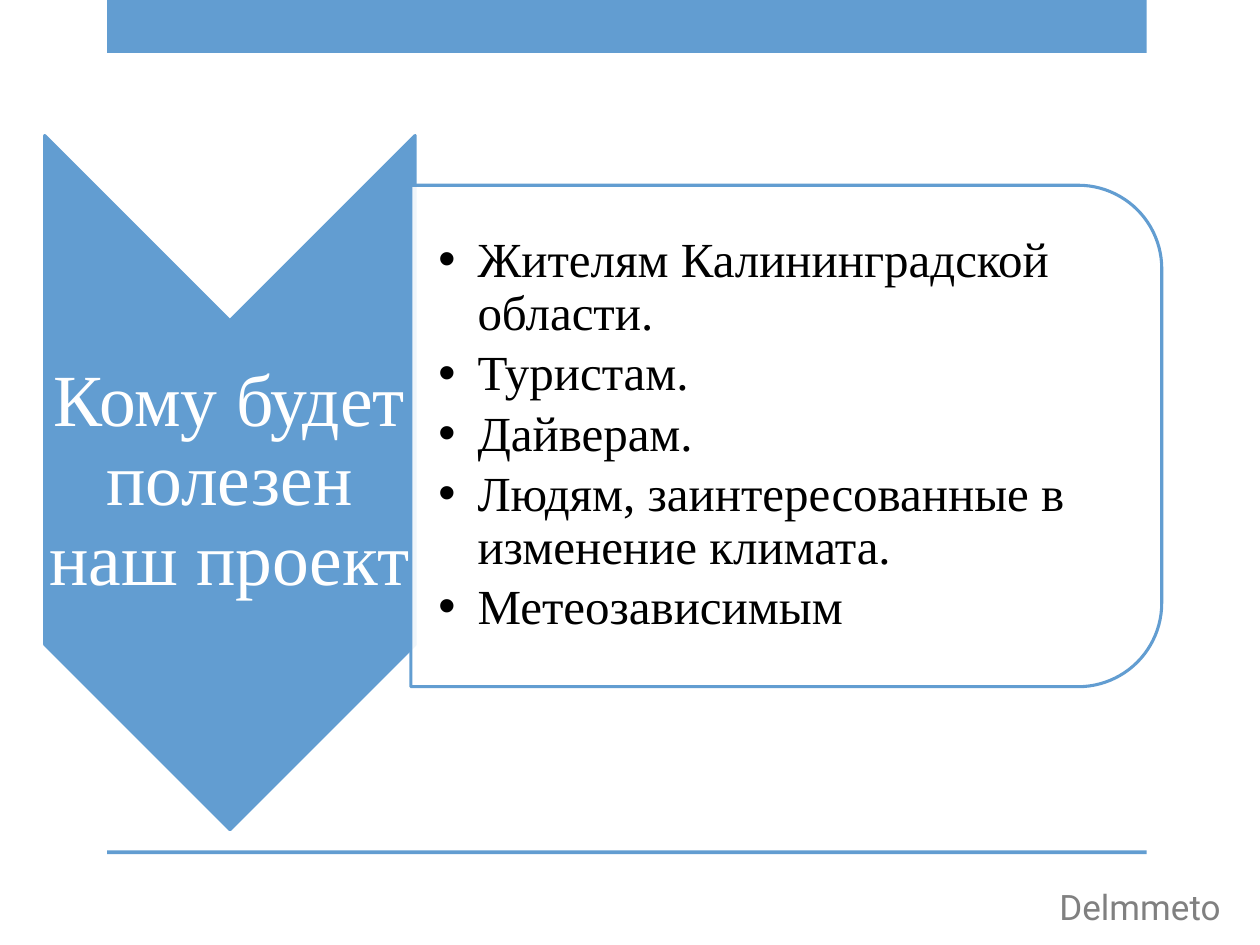
from lxml.etree import SubElement
from pptx import Presentation
from pptx.dml.color import RGBColor
from pptx.enum.shapes import MSO_SHAPE
from pptx.enum.text import MSO_ANCHOR, MSO_AUTO_SIZE, PP_ALIGN
from pptx.oxml.ns import qn
from pptx.util import Inches, Pt

TITLE = "Кому будет полезен наш проект"
GROUPS = [
    "Жителям Калининградской области.",
    "Туристам.",
    "Дайверам.",
    "Людям, заинтересованные в изменение климата.",
    "Метеозависимым",
]
FOOTER = "Delmmeto"
THEME = {
    "blue": "629DD1", "white": "FFFFFF", "black": "000000", "gray": "808080",
    "serif": "Times New Roman", "sans": "Roboto",
    "title": 42, "body": 28, "footer": 20, "line": 1.75,
}
BANDS = [(0.85, 0, 8.25, 0.42), (0.85, 6.75, 8.25, 0.03)]
ARROW = (-0.93, 2.36, 5.51, 2.94)
PANEL = (4.25, 0.48, 3.98, 5.96)


def color(name):
    return RGBColor.from_string(THEME[name])


def draw(slide, kind, box, fill, line=None, turn=0):
    shape = slide.shapes.add_shape(kind, *map(Inches, box))
    shape.shadow.inherit = False
    shape.rotation = turn
    shape.fill.solid()
    shape.fill.fore_color.rgb = color(fill)
    if line:
        shape.line.color.rgb = color(line)
        shape.line.width = Pt(THEME["line"])
    else:
        shape.line.fill.background()
    return shape


def place(shape, box, insets, anchor):
    shape.left, shape.top, shape.width, shape.height = map(Inches, box)
    frame = shape.text_frame
    frame.word_wrap = True
    frame.auto_size = MSO_AUTO_SIZE.NONE
    frame.vertical_anchor = anchor
    (frame.margin_left, frame.margin_top,
     frame.margin_right, frame.margin_bottom) = map(Inches, insets)
    return frame


def write(para, text, size, font, ink, after=0, align=PP_ALIGN.LEFT, lead=0.9):
    para.alignment = align
    para.line_spacing = lead
    para.space_before = Pt(0)
    para.space_after = Pt(THEME[size] * after)
    run = para.add_run()
    run.text = text
    run.font.size = Pt(THEME[size])
    run.font.name = THEME[font]
    run.font.color.rgb = color(ink)


def main():
    deck = Presentation()
    deck.slide_width, deck.slide_height = Inches(10), Inches(7.5)
    slide = deck.slides.add_slide(deck.slide_layouts[1])
    title, body = slide.placeholders

    for band in BANDS:
        draw(slide, MSO_SHAPE.RECTANGLE, band, "blue")
    draw(slide, MSO_SHAPE.CHEVRON, ARROW, "blue", "blue", 90)
    panel = draw(slide, MSO_SHAPE.ROUND_2_SAME_RECTANGLE, PANEL, "white", "blue", 90)
    tone = panel.fill._xPr.find(qn("a:solidFill"))[0]
    SubElement(tone, qn("a:alpha"), val="90000")

    for holder in (title, body):
        slide.shapes._spTree.append(holder._element)
    frame = place(title, (0.35, 2.54, 2.94, 2.57), [0.03] * 4, MSO_ANCHOR.MIDDLE)
    write(frame.paragraphs[0], TITLE, "title", "serif", "white", 0.35, PP_ALIGN.CENTER)

    frame = place(body, (3.26, 1.66, 5.77, 3.59), (0.22, 0.02, 0.02, 0.02), MSO_ANCHOR.MIDDLE)
    for i, group in enumerate(GROUPS):
        para = frame.add_paragraph() if i else frame.paragraphs[0]
        write(para, group, "body", "serif", "black", 0.15)
        props = para._p.get_or_add_pPr()
        props.set("marL", str(Inches(0.31)))
        props.set("indent", str(-Inches(0.31)))
        SubElement(props, qn("a:buChar"), char="•")

    box = (8.31, 6.98, 1.69, 0.52)
    note = slide.shapes.add_textbox(*map(Inches, box))
    frame = place(note, box, (0.1, 0.05, 0.1, 0.05), MSO_ANCHOR.TOP)
    write(frame.paragraphs[0], FOOTER, "footer", "sans", "gray", lead=1.0)

    deck.save("out.pptx")


if __name__ == "__main__":
    main()
